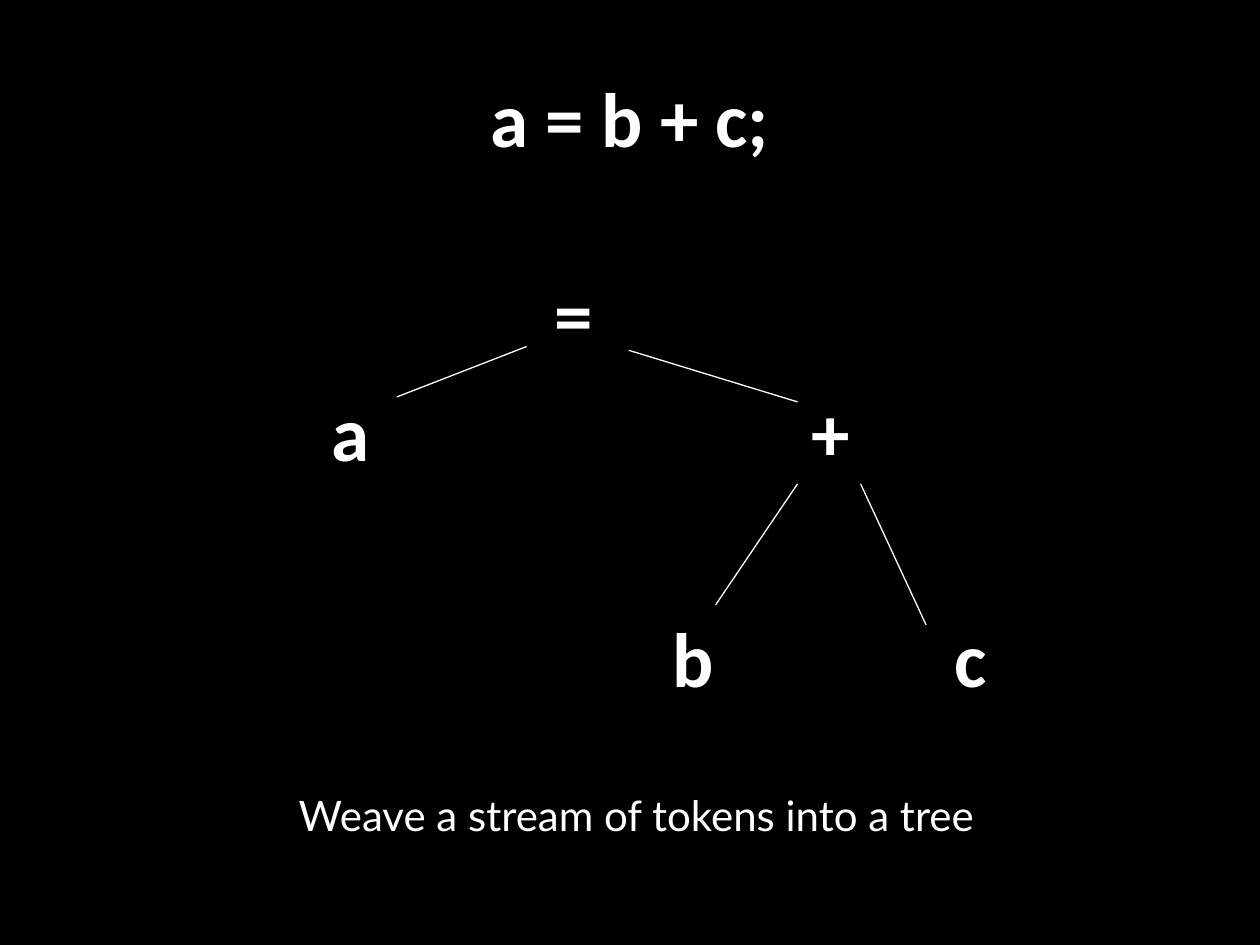
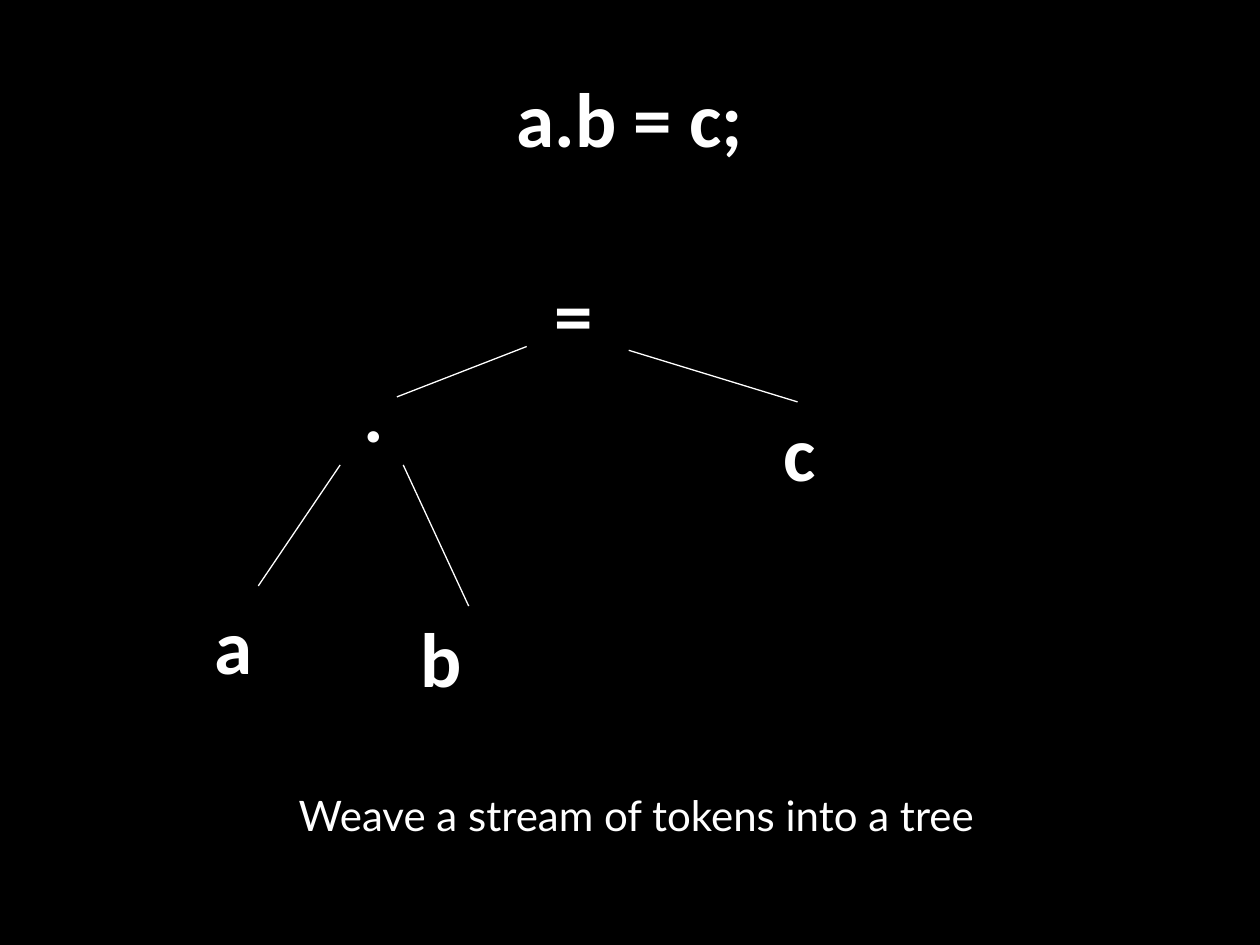
from dataclasses import dataclass

from lxml.etree import SubElement
from pptx import Presentation
from pptx.dml.color import RGBColor
from pptx.enum.shapes import MSO_CONNECTOR
from pptx.enum.text import MSO_ANCHOR, MSO_AUTO_SIZE, PP_ALIGN
from pptx.oxml.ns import qn
from pptx.util import Inches, Pt


@dataclass(frozen=True)
class Theme:
    background: RGBColor = RGBColor(0, 0, 0)
    ink: RGBColor = RGBColor(255, 255, 255)
    code_font: str = "Calibri"
    caption_font: str = "Lato"
    code_size: float = 44
    caption_size: float = 24
    branch_width: float = 0.75


NODE_WIDTH, NODE_HEIGHT = 0.99, 0.84
ROOT = (4.06, 2.07)
ROOT_BRANCHES = [((3.15, 3.15), (4.18, 2.75)), ((6.33, 3.19), (4.99, 2.78))]
OPERATOR_BRANCHES = [((0.23, 0.84), (-0.42, 1.8)), ((0.73, 0.84), (1.25, 1.96))]
CAPTION = "Weave a stream of tokens into a tree"


class TreeDeck:
    def __init__(self, theme):
        self.theme = theme
        self.presentation = Presentation()
        self.presentation.slide_width = Inches(10)
        self.presentation.slide_height = Inches(7.5)
        self.slide = None

    def set_wording(self, holder, wording, font_name, size, bold):
        frame = holder.text_frame
        frame.text = wording
        frame.word_wrap = True
        paragraph = frame.paragraphs[0]
        paragraph.alignment = PP_ALIGN.CENTER
        font = paragraph.runs[0].font
        font.name = font_name
        font.size = Pt(size)
        font.bold = bold
        font.color.rgb = self.theme.ink

    def start_slide(self, statement):
        self.slide = self.presentation.slides.add_slide(self.presentation.slide_layouts[5])
        fill = self.slide.background.fill
        fill.solid()
        fill.fore_color.rgb = self.theme.background
        title = self.slide.shapes.title
        title.left, title.top = Inches(0.5), Inches(0.3)
        title.width, title.height = Inches(9), Inches(1.25)
        title.text_frame.vertical_anchor = MSO_ANCHOR.MIDDLE
        self.set_wording(title, statement, self.theme.code_font, self.theme.code_size, True)

    def text(self, wording, left, top, width, height, font_name, size, bold):
        holder = self.slide.shapes.add_textbox(
            Inches(left), Inches(top), Inches(width), Inches(height)
        )
        self.set_wording(holder, wording, font_name, size, bold)
        holder.text_frame.auto_size = MSO_AUTO_SIZE.SHAPE_TO_FIT_TEXT

    def caption(self, wording):
        self.text(wording, 0.42, 6.22, 9.26, 0.5,
                  self.theme.caption_font, self.theme.caption_size, False)

    def node(self, token, left, top):
        self.text(token, left, top, NODE_WIDTH, NODE_HEIGHT,
                  self.theme.code_font, self.theme.code_size, True)

    def branch(self, start, end):
        line = self.slide.shapes.add_connector(
            MSO_CONNECTOR.STRAIGHT, *(Inches(value) for value in (*start, *end))
        )
        line.line.color.rgb = self.theme.ink
        line.line.width = Pt(self.theme.branch_width)
        SubElement(line._element.spPr, qn("a:effectLst"))

    def syntax_tree(self, statement, operator, leaves):
        self.start_slide(statement)
        self.caption(CAPTION)
        for token, left, top in [("=", *ROOT), operator, *leaves]:
            self.node(token, left, top)
        for start, end in ROOT_BRANCHES:
            self.branch(start, end)
        _, left, top = operator
        for start, end in OPERATOR_BRANCHES:
            self.branch((left + start[0], top + start[1]), (left + end[0], top + end[1]))


def main():
    deck = TreeDeck(Theme())
    deck.syntax_tree(
        "a = b + c;", ("+", 6.1, 3),
        [("a", 2.29, 3), ("b", 5.01, 4.8), ("c", 7.21, 4.8)],
    )
    deck.syntax_tree(
        "a.b = c;", (".", 2.47, 2.85),
        [("a", 1.36, 4.69), ("b", 3.01, 4.8), ("c", 5.85, 3.16)],
    )
    deck.presentation.save("out.pptx")


if __name__ == "__main__":
    main()
